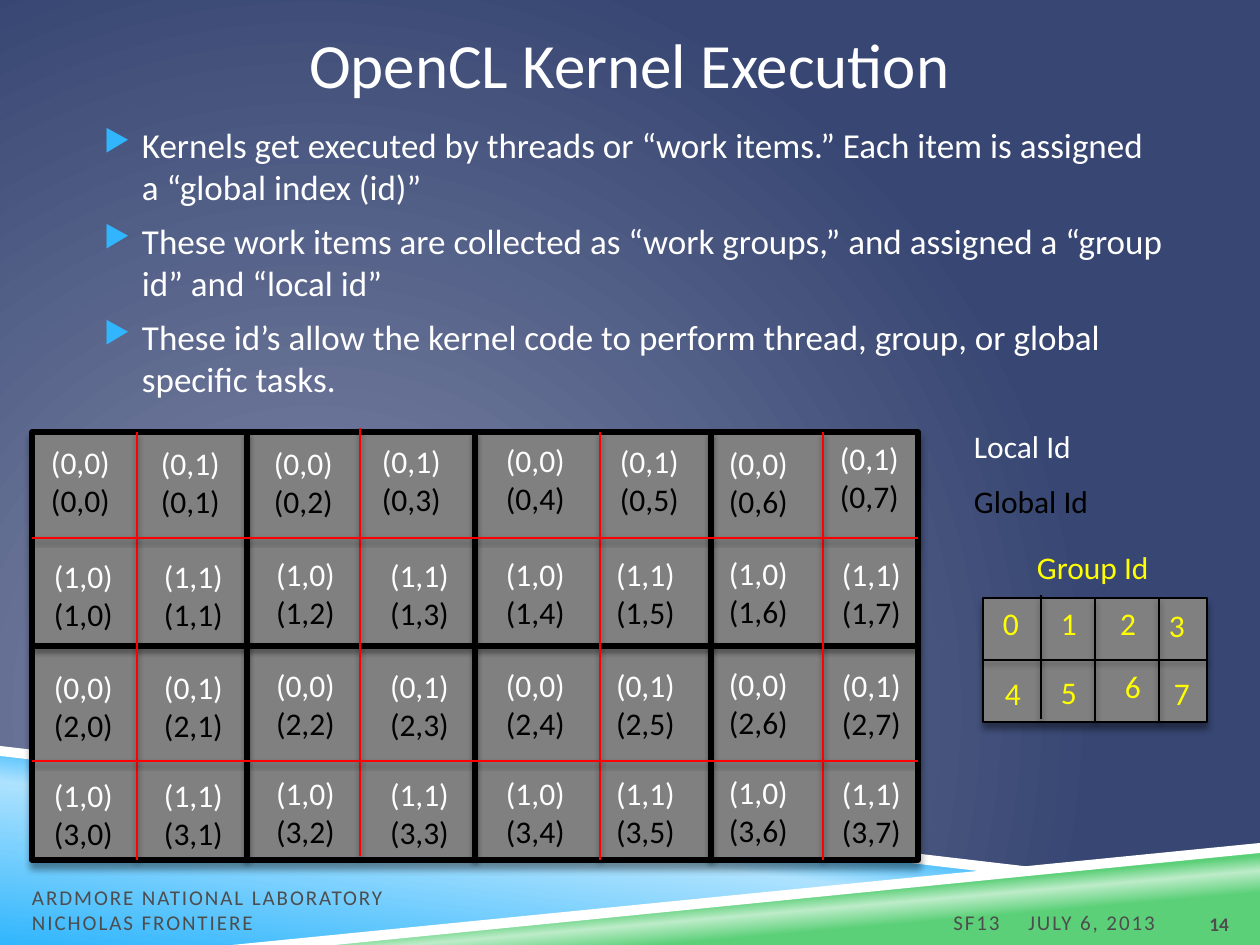
import lxml.etree
import pptx
import pptx.dml.color
import pptx.enum.shapes
import pptx.enum.text
import pptx.oxml.ns
import pptx.util

SCALE = 914400 / 126
FONT = "Calibri"
WHITE, BLACK, RED, YELLOW = "FFFFFF", "000000", "FF0000", "FFFF00"
GRAY, FOOTER_GRAY, SKY = "808080", "4D4D4D", "31B6FD"
ALIGN = pptx.enum.text.PP_ALIGN
ANCHOR = pptx.enum.text.MSO_ANCHOR


def px(length):
    return pptx.util.Emu(round(length * SCALE))


def rgb(hex_value):
    return pptx.dml.color.RGBColor.from_string(hex_value)


def assign(target, values):
    for name, value in values.items():
        setattr(target, name, value)


def child(parent, tag, **attributes):
    values = {name: str(value) for name, value in attributes.items()}
    return lxml.etree.SubElement(parent, pptx.oxml.ns.qn(tag), values)


def paint_gradient(fill, element, stops, angle=None):
    fill.gradient()
    gradient = element.find(".//" + pptx.oxml.ns.qn("a:gradFill"))
    for old in list(gradient):
        gradient.remove(old)
    stop_list = child(gradient, "a:gsLst")
    for position, color in stops:
        child(child(stop_list, "a:gs", pos=position * 1000), "a:srgbClr", val=color)
    if angle is None:
        circle = child(gradient, "a:path", path="circle")
        child(circle, "a:fillToRect", l=50000, t=100000, r=100000, b=50000)
    else:
        child(gradient, "a:lin", ang=angle * 60000, scaled=0)


def cast_shadow(shape, blur, distance):
    effects = child(shape._element.spPr, "a:effectLst")
    shadow = child(effects, "a:outerShdw", blurRad=round(blur * 12700),
                   dist=round(distance * 12700), dir=5400000, rotWithShape=0)
    child(child(shadow, "a:srgbClr", val=BLACK), "a:alpha", val=40000)


def add_wave(shapes, points):
    builder = shapes.build_freeform(*points[0], scale=SCALE)
    builder.add_line_segments(points[1:], close=True)
    wave = builder.convert_to_shape()
    wave.line.fill.background()
    wave.shadow.inherit = False
    return wave


def add_run(paragraph, words, color, size, bold=False, spacing=0):
    run = paragraph.add_run()
    run.text = words
    assign(run.font, {"name": FONT, "size": pptx.util.Pt(size), "bold": bold})
    run.font.color.rgb = rgb(color)
    if spacing:
        run._r.get_or_add_rPr().set("spc", str(round(spacing * 100)))


def add_label(shapes, box, lines, inset=13, size=18):
    frame = shapes.add_textbox(*map(px, box)).text_frame
    assign(frame, {"word_wrap": True, "margin_left": px(inset),
                   "auto_size": pptx.enum.text.MSO_AUTO_SIZE.SHAPE_TO_FIT_TEXT})
    for index, (words, color) in enumerate(lines):
        paragraph = frame.add_paragraph() if index else frame.paragraphs[0]
        add_run(paragraph, words, color, size)


def add_footer(shapes, box, runs, align=ALIGN.LEFT, **style):
    frame = shapes.add_textbox(*map(px, box)).text_frame
    assign(frame, {"word_wrap": True, "vertical_anchor": ANCHOR.BOTTOM, "margin_left": 0,
                   "margin_right": 0, "margin_bottom": 0})
    frame.paragraphs[0].alignment = align
    for words, spacing in runs:
        add_run(frame.paragraphs[0], words, FOOTER_GRAY, spacing=spacing, **style)


def add_bullets(shapes, box, sentences):
    frame = shapes.add_textbox(*map(px, box)).text_frame
    assign(frame, {"word_wrap": True, "margin_left": 0, "margin_right": 0})
    for index, sentence in enumerate(sentences):
        paragraph = frame.add_paragraph() if index else frame.paragraphs[0]
        paragraph.space_before = pptx.util.Pt(7)
        add_run(paragraph, sentence, WHITE, 20)
        properties = paragraph._p.get_or_add_pPr()
        properties.set("marL", str(px(48)))
        properties.set("indent", str(px(-38)))
        child(child(properties, "a:buClr"), "a:srgbClr", val=SKY)
        child(properties, "a:buSzPct", val=85000)
        child(properties, "a:buChar", char="▶")


def add_board(shapes, box, border):
    board = shapes.add_shape(pptx.enum.shapes.MSO_SHAPE.RECTANGLE, *map(px, box))
    board.fill.solid()
    board.fill.fore_color.rgb = rgb(GRAY)
    board.line.color.rgb = rgb(BLACK)
    board.line.width = pptx.util.Pt(border)
    cast_shadow(board, 4, 3.3)
    return board


def add_divider(shapes, board, box, color, width, x=None, y=None, lift=0):
    left, top, across, down = box
    if y is None:
        ends, sites = (x, top - lift, x, top + down - lift), (0, 2)
        centered = 2 * x == 2 * left + across
    else:
        ends, sites = (left, y, left + across, y), (1, 3)
        centered = 2 * y == 2 * top + down
    divider = shapes.add_connector(pptx.enum.shapes.MSO_CONNECTOR.STRAIGHT, *map(px, ends))
    divider.line.color.rgb = rgb(color)
    divider.line.width = pptx.util.Pt(width)
    cast_shadow(divider, 3, 2)
    if centered:
        divider.begin_connect(board, sites[0])
        divider.end_connect(board, sites[1])


def add_work_items(slide):
    shapes = slide.shapes.add_group_shape().shapes
    box = (32, 432, 886, 428)
    board = add_board(shapes, box, 3)
    for place in ({"x": 475}, {"y": 646}, {"x": 247}, {"x": 711}):
        add_divider(shapes, board, box, BLACK, 3, **place)
    for place in ({"x": 137}, {"x": 360, "lift": 4}, {"x": 600}, {"x": 823},
                  {"y": 538}, {"y": 761}):
        add_divider(shapes, board, box, RED, 1, **place)
    first_row = [(31, 437), (141, 438), (247, 438), (355, 436),
                 (486, 435), (600, 436), (702, 438), (813, 433)]
    columns = [(34, 0), (144, 0), (249, 2), (363, 1), (486, 2), (596, 2), (702, 3), (815, 2)]
    rows = [first_row] + [[(x, top - rise) for x, rise in columns] for top in (551, 662, 770)]
    for row, spots in enumerate(rows):
        for column, (x, y) in enumerate(spots):
            ids = [(f"({row % 2},{column % 2})", WHITE), (f"({row},{column})", BLACK)]
            add_label(shapes, (x, y, 106, 89), ids, inset=27 if column % 4 > 1 else 20)


def add_work_groups(slide):
    shapes = slide.shapes.add_group_shape().shapes
    box = (983, 598, 224, 124)
    board = add_board(shapes, box, 0.75)
    for place in ({"x": 1095}, {"x": 1041, "lift": 3}, {"x": 1159}, {"y": 660}):
        add_divider(shapes, board, box, BLACK, 1, **place)
    spots = [(983, 598), (1041, 598), (1100, 598), (1149, 600),
             (985, 668), (1041, 667), (1105, 661), (1154, 668)]
    for group_id, (x, y) in enumerate(spots):
        add_label(shapes, (x, y, 58, 50), [(str(group_id), YELLOW)], inset=20)


def add_backdrop(slide):
    paint_gradient(slide.background.fill, slide._element, [(0, "848CAB"), (100, "374672")])
    gradient_waves = [
        ([(0, 752), (998, 872), (252, 945), (0, 945)],
         [(0, SKY), (52, "ADE2FE"), (66, SKY)], 277),
        ([(249, 945), (1260, 847), (1260, 945)],
         [(28, "5BD078"), (40, "BDECC9"), (48, "5BD078")], 265),
    ]
    for points, stops, angle in gradient_waves:
        wave = add_wave(slide.shapes, points)
        paint_gradient(wave.fill, wave._element, stops, angle)
    for points in ([(0, 746), (0, 756), (995, 873), (1048, 869)],
                   [(1260, 843), (232, 945), (335, 945), (1260, 853)]):
        stripe = add_wave(slide.shapes, points)
        stripe.fill.solid()
        stripe.fill.fore_color.rgb = rgb(WHITE)


def format_title(title, words):
    assign(title, dict(zip(("left", "top", "width", "height"), map(px, (94, -16, 1071, 158)))))
    assign(title.text_frame, {"vertical_anchor": ANCHOR.MIDDLE, "margin_left": 0,
                              "margin_right": 0})
    title.text_frame.paragraphs[0].alignment = ALIGN.CENTER
    add_run(title.text_frame.paragraphs[0], words, WHITE, 36)


def main():
    deck = pptx.Presentation()
    assign(deck, {"slide_width": px(1260), "slide_height": px(945)})
    slide = deck.slides.add_slide(deck.slide_layouts[5])
    add_backdrop(slide)
    format_title(slide.shapes.title, "OpenCL Kernel Execution")
    add_bullets(slide.shapes, (94, 117, 1071, 514), [
        "Kernels get executed by threads or “work items.” Each item is assigned "
        "a “global index (id)”",
        "These work items are collected as “work groups,” and assigned a “group "
        "id” and “local id”",
        "These id’s allow the kernel code to perform thread, group, or global specific tasks.",
    ])
    add_footer(slide.shapes, (882, 885, 273, 50),
               [("SF13", 1.1), (" ", 12.5), ("JULY 6, 2013", 1.1)], ALIGN.RIGHT, size=12)
    add_footer(slide.shapes, (32, 885, 399, 50),
               [("ARDMORE NATIONAL LABORATORY NICHOLAS FRONTIERE", 1.1)], size=12)
    add_footer(slide.shapes, (1166, 885, 63, 50), [("14", 0)], ALIGN.RIGHT, size=11, bold=True)
    add_work_items(slide)
    add_label(slide.shapes, (961, 421, 139, 50), [("Local Id", WHITE)])
    add_label(slide.shapes, (961, 476, 150, 50), [("Global Id", BLACK)])
    add_work_groups(slide)
    add_label(slide.shapes, (1024, 542, 150, 50), [("Group Id", YELLOW)])
    deck.save("out.pptx")


if __name__ == "__main__":
    main()
